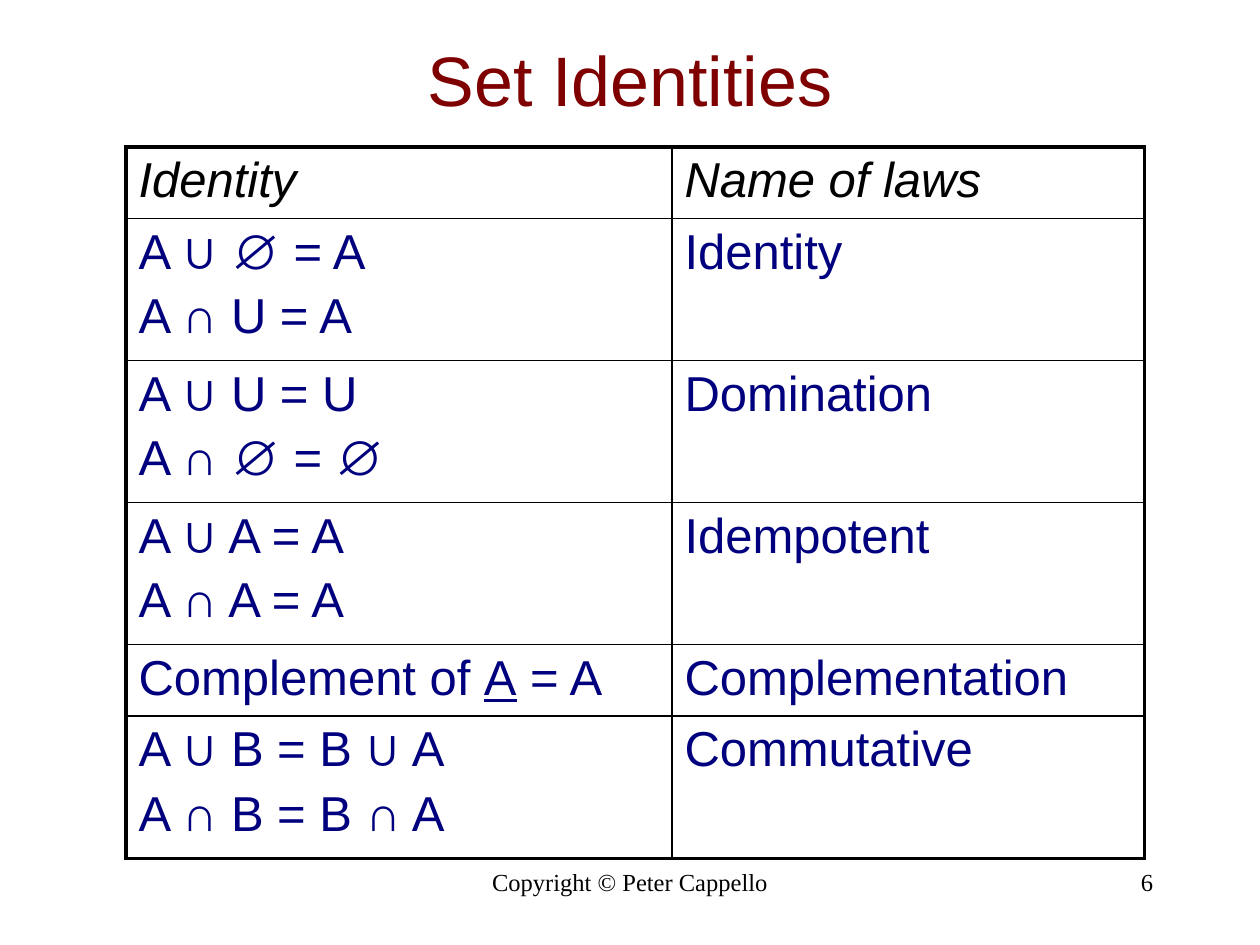
import itertools

import pptx
import pptx.dml.color
import pptx.enum.text
import pptx.oxml
import pptx.oxml.ns
import pptx.util

Pt = pptx.util.Pt
ALIGN = pptx.enum.text.PP_ALIGN
ANCHOR = pptx.enum.text.MSO_ANCHOR

BLACK, NAVY, MAROON = "000000", "00007F", "7F0000"
SYMBOLS = "∪∩∅"
LAWS = [
    (["Identity"], "Name of laws"),
    (["A ∪ ∅ = A", "A ∩ U = A"], "Identity"),
    (["A ∪ U = U", "A ∩ ∅ = ∅"], "Domination"),
    (["A ∪ A = A", "A ∩ A = A"], "Idempotent"),
    (["Complement of _A_ = A"], "Complementation"),
    (["A ∪ B = B ∪ A", "A ∩ B = B ∩ A"], "Commutative"),
]
COLUMN_WIDTHS = [312, 270]
ROW_HEIGHTS = {1: 40.8, 2: 81.2}


def color(value):
    """Turn a hex string into a colour."""
    return pptx.dml.color.RGBColor.from_string(value)


def set_font(paragraph, name, size, value, italic=False):
    """Set the font of a whole paragraph."""
    font = paragraph.font
    font.name, font.size, font.italic = name, Pt(size), italic
    font.color.rgb = color(value)


def add_label(slide, box, text, name, size, value, align, anchor=ANCHOR.TOP):
    """Place one line of text in a box of left, top, width and height."""
    shape = slide.shapes.add_textbox(*map(Pt, box))
    frame = shape.text_frame
    frame.word_wrap = True
    frame.vertical_anchor = anchor
    paragraph = frame.paragraphs[0]
    paragraph.text = text
    paragraph.alignment = align
    set_font(paragraph, name, size, value)


def add_formula(paragraph, formula):
    """Write a formula with bold set symbols and underlined _marked_ parts."""
    for index, part in enumerate(formula.split("_")):
        for is_symbol, letters in itertools.groupby(part, lambda letter: letter in SYMBOLS):
            run = paragraph.add_run()
            run.text = "".join(letters)
            if is_symbol:
                run.font.bold = True
            if index % 2:
                run.font.underline = True


def set_borders(cell, widths):
    """Draw the left, right, top and bottom borders of a cell in black."""
    properties = cell._tc.get_or_add_tcPr()
    for index, (side, width) in enumerate(zip("LRTB", widths)):
        line = pptx.oxml.parse_xml(
            f'<a:ln{side} {pptx.oxml.ns.nsdecls("a")} w="{Pt(width)}">'
            f'<a:solidFill><a:srgbClr val="{BLACK}"/></a:solidFill></a:ln{side}>'
        )
        properties.insert(index, line)


def fill_cell(cell, lines, is_header):
    """Write the lines of a cell, one paragraph each."""
    cell.fill.background()
    frame = cell.text_frame
    for index, line in enumerate(lines):
        paragraph = frame.add_paragraph() if index else frame.paragraphs[0]
        if index:
            paragraph.space_before = Pt(5.6)
        add_formula(paragraph, line)
        set_font(paragraph, "Arial", 28, BLACK if is_header else NAVY, is_header)


def add_laws_table(slide, left, top):
    """Place the table of identities with a thick outer frame."""
    heights = [ROW_HEIGHTS[len(formulas)] for formulas, _ in LAWS]
    last_row, last_column = len(LAWS) - 1, len(COLUMN_WIDTHS) - 1
    box = map(Pt, (left, top, sum(COLUMN_WIDTHS), sum(heights)))
    table = slide.shapes.add_table(len(LAWS), len(COLUMN_WIDTHS), *box).table
    table.first_row = table.horz_banding = False
    for column, width in zip(table.columns, COLUMN_WIDTHS):
        column.width = Pt(width)
    for row, (formulas, law) in enumerate(LAWS):
        table.rows[row].height = Pt(heights[row])
        for column, lines in enumerate((formulas, [law])):
            cell = table.cell(row, column)
            fill_cell(cell, lines, row == 0)
            outer = (column == 0, column == last_column, row == 0, row == last_row)
            set_borders(cell, [2.25 if edge else 1 for edge in outer])


def add_footer(slide, top, height):
    """Place the copyright line and the slide number."""
    style = ("Times New Roman", 14, BLACK)
    add_label(slide, (246, top, 228, height), "Copyright © Peter Cappello", *style, ALIGN.CENTER)
    add_label(slide, (516, top, 150, height), "6", *style, ALIGN.RIGHT)


def main():
    """Build the slide and save it."""
    presentation = pptx.Presentation()
    presentation.slide_width, presentation.slide_height = Pt(720), Pt(540)
    slide = presentation.slides.add_slide(presentation.slide_layouts[6])
    add_footer(slide, 492, 36)
    add_label(slide, (54, 0, 612, 90), "Set Identities", "Arial", 40, MAROON,
              ALIGN.CENTER, ANCHOR.MIDDLE)
    add_laws_table(slide, 72, 84)
    presentation.save("out.pptx")


if __name__ == "__main__":
    main()
